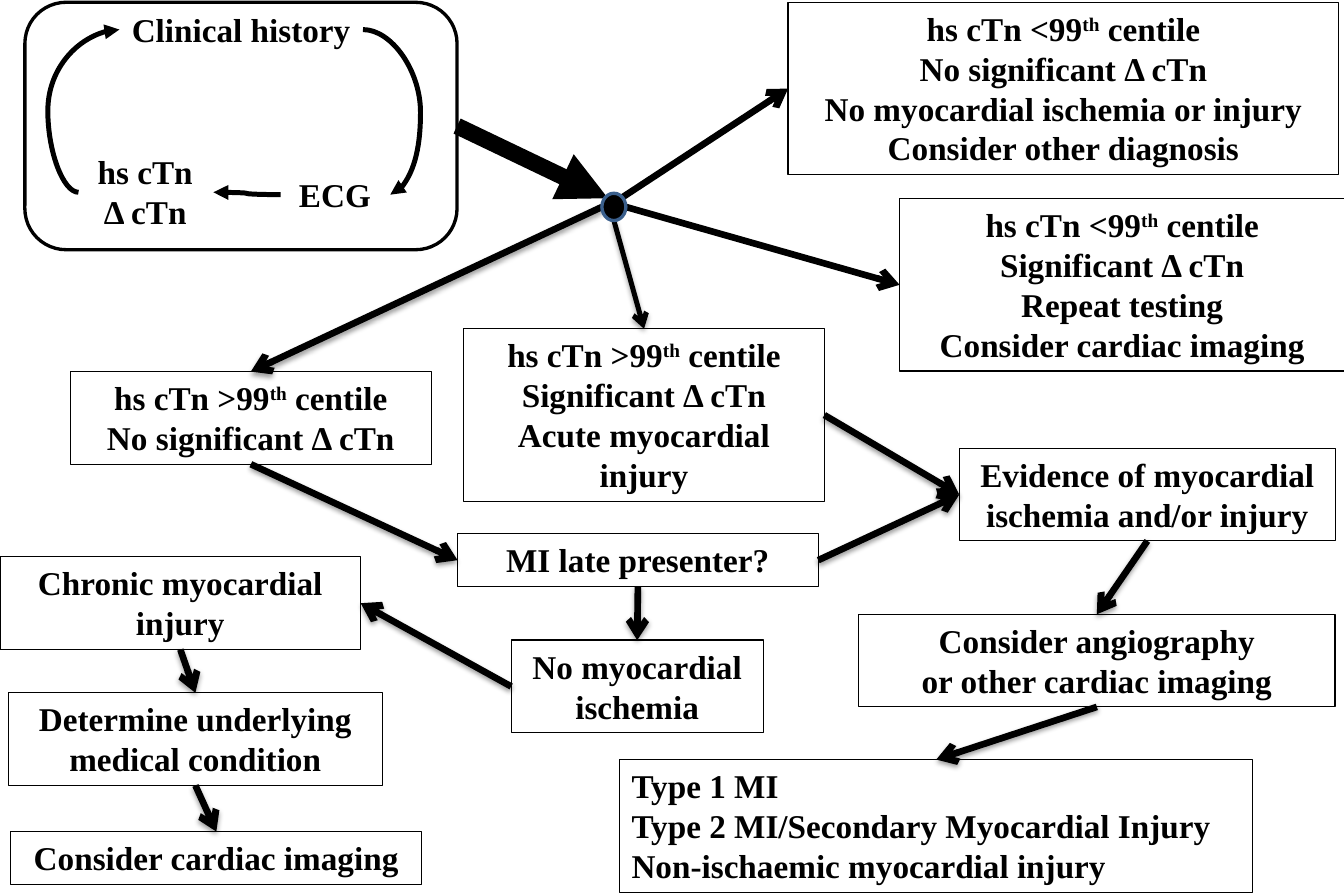
from lxml import etree
from pptx import Presentation
from pptx import util as u
from pptx.dml.color import RGBColor
from pptx.enum import shapes, text
from pptx.oxml import ns

COLOURS = {"ink": "000000", "hub edge": "3A5F8C"}
FONT = {"name": "Times New Roman", "size": u.Pt(20), "bold": True}
FRAME = {"word_wrap": True, "vertical_anchor": text.MSO_ANCHOR.TOP}
CENTRE, LEFT = text.PP_ALIGN.CENTER, text.PP_ALIGN.LEFT
TOP_SIDE, LEFT_SIDE, BOTTOM_SIDE, RIGHT_SIDE = range(4)
STRAIGHT, CURVE = shapes.MSO_CONNECTOR.STRAIGHT, shapes.MSO_CONNECTOR.CURVE


def colour(name):
    return RGBColor.from_string(COLOURS[name])


def apply(target, formats):
    for name, value in formats.items():
        setattr(target, name, value)


def row_height(rows):
    return 0.27 + 0.85 * rows


def write(shape, lines, align=CENTRE, **frame_changes):
    """Write one paragraph per line; text between carets is superscript."""
    frame = shape.text_frame
    apply(frame, {**FRAME, **frame_changes})
    for i, line in enumerate(lines):
        paragraph = frame.paragraphs[0] if i == 0 else frame.add_paragraph()
        paragraph.alignment = align
        for j, piece in enumerate(line.split("^")):
            run = paragraph.add_run()
            run.text = piece
            apply(run.font, FONT)
            run.font.color.rgb = colour("ink")
            if j % 2:
                run.font._element.set("baseline", "30000")


def outline(shape, width, name="ink"):
    shape.shadow.inherit = False
    shape.line.color.rgb = colour(name)
    shape.line.width = u.Pt(width)


def add_step(slide, left, top, width, rows, lines, align=CENTRE):
    step = slide.shapes.add_shape(
        shapes.MSO_SHAPE.RECTANGLE,
        *map(u.Cm, (left, top, width, row_height(rows))))
    step.fill.background()
    outline(step, 0.75)
    write(step, lines, align)
    return step


def add_label(slide, left, top, width, lines, wrap=True):
    label = slide.shapes.add_textbox(
        *map(u.Cm, (left, top, width, row_height(len(lines)))))
    write(label, lines, word_wrap=wrap)


def add_arrow(slide, start, end, width=4, head="arrow", shadow=True, bend=None):
    """Each end is a point in cm or a pair of shape and side."""
    points = [(0, 0) if hasattr(e[0], "shape_type") else e for e in (start, end)]
    kind = STRAIGHT if bend is None else CURVE
    arrow = slide.shapes.add_connector(kind, *(u.Cm(v) for p in points for v in p))
    for place, join in ((start, arrow.begin_connect), (end, arrow.end_connect)):
        if hasattr(place[0], "shape_type"):
            join(*place)
    arrow.line.color.rgb = colour("ink")
    arrow.line.width = u.Pt(width)
    etree.SubElement(arrow.get_or_add_ln(), ns.qn("a:tailEnd"), type=head)
    properties = arrow.element.spPr
    effects = etree.SubElement(properties, ns.qn("a:effectLst"))
    if shadow:
        cast = etree.SubElement(effects, ns.qn("a:outerShdw"), blurRad="40000",
                                dist="20000", dir="5400000", rotWithShape="0")
        ink = etree.SubElement(cast, ns.qn("a:srgbClr"), val=COLOURS["ink"])
        etree.SubElement(ink, ns.qn("a:alpha"), val="38000")
    if bend is not None:
        guides = properties.find(ns.qn("a:prstGeom")).find(ns.qn("a:avLst"))
        etree.SubElement(guides, ns.qn("a:gd"), name="adj1",
                         fmla=f"val {round(bend * 100000)}")


def add_assessment(slide, left, top, width, height):
    """Cycle of history, ECG and troponin inside a rounded frame."""
    border = slide.shapes.add_shape(shapes.MSO_SHAPE.ROUNDED_RECTANGLE,
                                    *map(u.Cm, (left, top, width, height)))
    border.fill.background()
    outline(border, 2)
    add_label(slide, left + 2.01, top + 0.03, 5.18, ["Clinical history"], wrap=False)
    add_label(slide, left + 5.44, top + 3.53, 2.31, ["ECG"])
    add_label(slide, left + 1.14, top + 3.05, 2.84, ["hs cTn", "Δ cTn"])
    for x1, y1, x2, y2, bend in ((7.19, 0.58, 7.77, 4.09, 2.11),
                                 (5.44, 4.09, 4.01, 4.04, 0.5),
                                 (1.14, 4.04, 2.01, 0.58, -0.75)):
        add_arrow(slide, (left + x1, top + y1), (left + x2, top + y2),
                  3, "triangle", False, bend)
    return border


def add_outcomes(slide, left, top):
    """Four troponin results."""
    results = (
        (15.26, 0, 11.71, 4, ["hs cTn <99^th^ centile", "No significant Δ cTn",
                              "No myocardial ischemia or injury",
                              "Consider other diagnosis"]),
        (17.63, 4.17, 9.47, 4, ["hs cTn <99^th^ centile", "Significant Δ cTn",
                                "Repeat testing", "Consider cardiac imaging"]),
        (8.36, 6.94, 7.67, 4, ["hs cTn >99^th^ centile", "Significant Δ cTn",
                               "Acute myocardial injury"]),
        (0, 7.85, 7.67, 2, ["hs cTn >99^th^ centile", "No significant Δ cTn"]))
    return [add_step(slide, left + x, top + y, *rest) for x, y, *rest in results]


def add_sequence(slide, left, top, steps):
    """Steps joined from bottom to top by arrows."""
    placed = [add_step(slide, left + x, top + y, *rest) for x, y, *rest in steps]
    for upper, lower in zip(placed, placed[1:]):
        add_arrow(slide, (upper, BOTTOM_SIDE), (lower, TOP_SIDE))
    return placed


def add_late_presenter(slide, left, top):
    return add_sequence(slide, left, top, (
        (0, 0, 7.67, 1, ["MI late presenter?"]),
        (1.14, 2.26, 5.36, 2, ["No myocardial", "ischemia"])))


def add_infarction(slide, left, top):
    return add_sequence(slide, left, top, (
        (7.22, 0, 8, 2, ["Evidence of myocardial", "ischemia and/or injury"]),
        (5.08, 3.53, 10.13, 2, ["Consider angiography", "or other cardiac imaging"]),
        (0, 6.62, 13.46, 3, ["Type 1 MI", "Type 2 MI/Secondary Myocardial Injury",
                             "Non-ischaemic myocardial injury"], LEFT)))


def add_chronic_injury(slide, left, top):
    return add_sequence(slide, left, top, (
        (0, 0, 7.67, 2, ["Chronic myocardial injury"]),
        (0.18, 2.89, 7.95, 2, ["Determine underlying medical condition"]),
        (0.23, 5.84, 8.74, 1, ["Consider cardiac imaging"])))


def add_hub(slide, left, top, width, height, assessment, outcomes):
    """Branching point between the assessment and its outcomes."""
    def spot(across, down):
        return left + across * width, top + down * height

    diagnosis, repeat, acute, stable = outcomes
    add_arrow(slide, (assessment, RIGHT_SIDE), spot(0.25, 0.18), 10, "triangle", False)
    add_arrow(slide, spot(0.85, 0.15), (diagnosis, LEFT_SIDE), shadow=False)
    add_arrow(slide, spot(1, 0.5), (repeat, LEFT_SIDE), shadow=False)
    add_arrow(slide, spot(0.5, 1), (acute, TOP_SIDE), 3)
    add_arrow(slide, spot(0, 0.5), (stable, TOP_SIDE))
    hub = slide.shapes.add_shape(shapes.MSO_SHAPE.FLOWCHART_CONNECTOR,
                                 *map(u.Cm, (left, top, width, height)))
    hub.fill.solid()
    hub.fill.fore_color.rgb = colour("ink")
    outline(hub, 2, "hub edge")


def main():
    deck = Presentation()
    deck.slide_width, deck.slide_height = u.Cm(28.58), u.Cm(19.05)
    slide = deck.slides.add_slide(deck.slide_layouts[6])
    assessment = add_assessment(slide, 0.53, 0.05, 9.19, 5.26)
    outcomes = add_outcomes(slide, 1.5, 0.05)
    late, no_ischemia = add_late_presenter(slide, 9.73, 11.35)
    evidence = add_infarction(slide, 13.18, 9.53)[0]
    chronic = add_chronic_injury(slide, 0, 11.84)[0]
    add_hub(slide, 12.8, 4.11, 0.51, 0.58, assessment, outcomes)
    acute, stable = outcomes[2:]
    for start, start_side, end, end_side in (
            (acute, RIGHT_SIDE, evidence, LEFT_SIDE),
            (late, RIGHT_SIDE, evidence, LEFT_SIDE),
            (stable, BOTTOM_SIDE, late, LEFT_SIDE),
            (no_ischemia, LEFT_SIDE, chronic, RIGHT_SIDE)):
        add_arrow(slide, (start, start_side), (end, end_side))
    deck.save("out.pptx")


if __name__ == "__main__":
    main()
